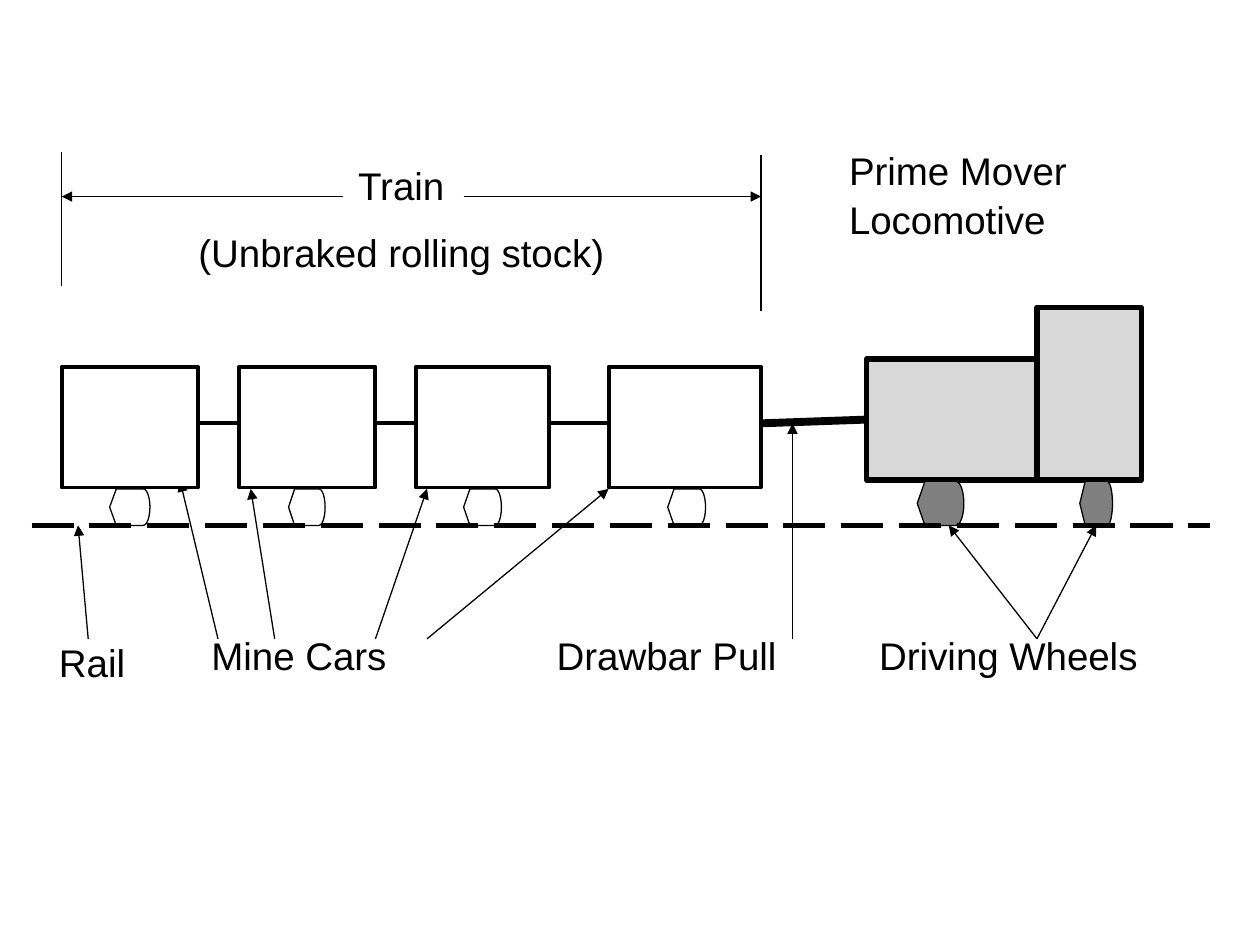
from typing import NamedTuple, Optional

from lxml.etree import SubElement
from pptx import Presentation
from pptx.dml.color import RGBColor
from pptx.enum.dml import MSO_LINE
from pptx.enum.shapes import MSO_CONNECTOR, MSO_SHAPE
from pptx.enum.text import MSO_ANCHOR, PP_ALIGN
from pptx.oxml.ns import qn
from pptx.util import Inches, Pt

BLACK = RGBColor(0x00, 0x00, 0x00)
WHITE = RGBColor(0xFF, 0xFF, 0xFF)
LIGHT_GREY = RGBColor(0xD8, 0xD8, 0xD8)
DARK_GREY = RGBColor(0x7F, 0x7F, 0x7F)

RAIL_Y = 4.17
COUPLER_Y = 3.36
CAR_TOP, CAR_HEIGHT = 2.91, 0.96
CAR_BOTTOM = 3.88
ENGINE_BOTTOM = 3.82
LABEL_TOP = 4.94
POINTER_Y = 5.07
DIMENSION_Y = 1.56
TRAIN_LEFT, TRAIN_RIGHT = 0.49, 6.04


class Box(NamedTuple):
    left: float
    top: float
    width: float
    height: float


class Car(NamedTuple):
    left: float
    width: float
    wheel_left: float
    wheel_width: float


class Line(NamedTuple):
    start: tuple[float, float]
    end: tuple[float, float]


CARS = [
    Car(0.49, 1.08, 0.87, 0.32),
    Car(1.90, 1.08, 2.29, 0.29),
    Car(3.30, 1.06, 3.68, 0.30),
    Car(4.83, 1.21, 5.30, 0.30),
]
CAR_POINTERS = [
    Line((1.73, POINTER_Y), (1.43, 3.82)),
    Line((2.98, POINTER_Y), (3.39, CAR_BOTTOM)),
    Line((3.39, POINTER_Y), (4.83, CAR_BOTTOM)),
    Line((2.18, POINTER_Y), (1.99, CAR_BOTTOM)),
]

deck = Presentation()
deck.slide_width, deck.slide_height = Inches(10), Inches(7.5)
page = deck.slides.add_slide(deck.slide_layouts[6])


def draw_shape(kind: MSO_SHAPE, box: Box, fill: RGBColor, weight: float):
    shape = page.shapes.add_shape(kind, *(Inches(length) for length in box))
    shape.shadow.inherit = False
    shape.fill.solid()
    shape.fill.fore_color.rgb = fill
    shape.line.color.rgb = BLACK
    shape.line.width = Pt(weight)
    return shape


def draw_wheel(left: float, top: float, width: float, fill: RGBColor) -> None:
    box = Box(left, top, width, RAIL_Y - top)
    draw_shape(MSO_SHAPE.FLOWCHART_DISPLAY, box, fill, 0.75)


def draw_line(line: Line, weight: float = 0.75, arrow: bool = False,
              dash: Optional[MSO_LINE] = None):
    connector = page.shapes.add_connector(
        MSO_CONNECTOR.STRAIGHT,
        *(Inches(length) for length in (*line.start, *line.end)))
    connector.line.color.rgb = BLACK
    connector.line.width = Pt(weight)
    if dash is not None:
        connector.line.dash_style = dash
    if arrow:
        SubElement(connector.line._get_or_add_ln(), qn("a:tailEnd"), type="triangle")
    SubElement(connector._element.spPr, qn("a:effectLst"))
    return connector


def write_text(lines: list[str], box: Box, *, size: float = 22,
               align: PP_ALIGN = PP_ALIGN.LEFT, space_after: float = 0) -> None:
    label = page.shapes.add_textbox(*(Inches(length) for length in box))
    label.fill.solid()
    label.fill.fore_color.rgb = WHITE
    frame = label.text_frame
    frame.word_wrap = True
    frame.vertical_anchor = MSO_ANCHOR.TOP
    for index, text in enumerate(lines):
        para = frame.paragraphs[0] if index == 0 else frame.add_paragraph()
        para.alignment = align
        para.line_spacing = 1.07
        para.space_after = Pt(space_after)
        span = para.add_run()
        span.text = text
        span.font.name = "Arial"
        span.font.size = Pt(size)
        span.font.color.rgb = BLACK


# Mine car label and pointers, behind the cars
write_text(["Mine Cars"], Box(1.58, LABEL_TOP, 2.64, 1.06), space_after=10)
for pointer in CAR_POINTERS:
    draw_line(pointer, arrow=True)

# Mine cars with their wheels and couplers
for car in CARS:
    draw_shape(MSO_SHAPE.RECTANGLE,
               Box(car.left, CAR_TOP, car.width, CAR_HEIGHT), WHITE, 2.25)
    draw_wheel(car.wheel_left, CAR_BOTTOM, car.wheel_width, WHITE)
for car, next_car in zip(CARS, CARS[1:]):
    draw_line(Line((car.left + car.width, COUPLER_Y), (next_car.left, COUPLER_Y)), 2.25)

# Locomotive and drawbar
engine = draw_shape(MSO_SHAPE.RECTANGLE, Box(6.88, 2.85, 1.36, 0.96), LIGHT_GREY, 3)
draw_shape(MSO_SHAPE.RECTANGLE, Box(8.23, 2.44, 0.83, 1.37), LIGHT_GREY, 3)
drawbar = draw_line(Line((6.88, 3.34), (TRAIN_RIGHT, COUPLER_Y)), 4.5)
drawbar.begin_connect(engine, 1)
for wheel_left, wheel_width in ((8.57, 0.26), (7.28, 0.37)):
    draw_wheel(wheel_left, ENGINE_BOTTOM, wheel_width, DARK_GREY)

# Upper labels and train dimension
write_text(["Prime Mover", "Locomotive"], Box(6.64, 1.09, 2.53, 1.33))
write_text(["Train", "(Unbraked rolling stock)"], Box(0.62, 1.21, 5.13, 0.98),
           align=PP_ALIGN.CENTER, space_after=10)
draw_line(Line((TRAIN_RIGHT, 1.23), (TRAIN_RIGHT, 2.47)))
draw_line(Line((TRAIN_LEFT, 1.21), (TRAIN_LEFT, 2.27)))
draw_line(Line((2.72, DIMENSION_Y), (TRAIN_LEFT, DIMENSION_Y)), arrow=True)
draw_line(Line((3.68, DIMENSION_Y), (TRAIN_RIGHT, DIMENSION_Y)), arrow=True)

# Rail
draw_line(Line((0.25, RAIL_Y), (9.6, RAIL_Y)), 3, dash=MSO_LINE.LONG_DASH)

# Lower labels and their pointers
write_text(["Drawbar Pull"], Box(4.32, LABEL_TOP, 2.5, 0.86))
write_text(["Driving Wheels"], Box(6.88, LABEL_TOP, 2.87, 0.47))
write_text(["Rail"], Box(0.37, 5, 1.06, 0.74))
for start_x, end in ((6.29, (6.29, COUPLER_Y)), (8.23, (7.53, RAIL_Y)),
                     (8.23, (8.7, RAIL_Y)), (0.7, (0.62, RAIL_Y))):
    draw_line(Line((start_x, POINTER_Y), end), arrow=True)

deck.save("out.pptx")
